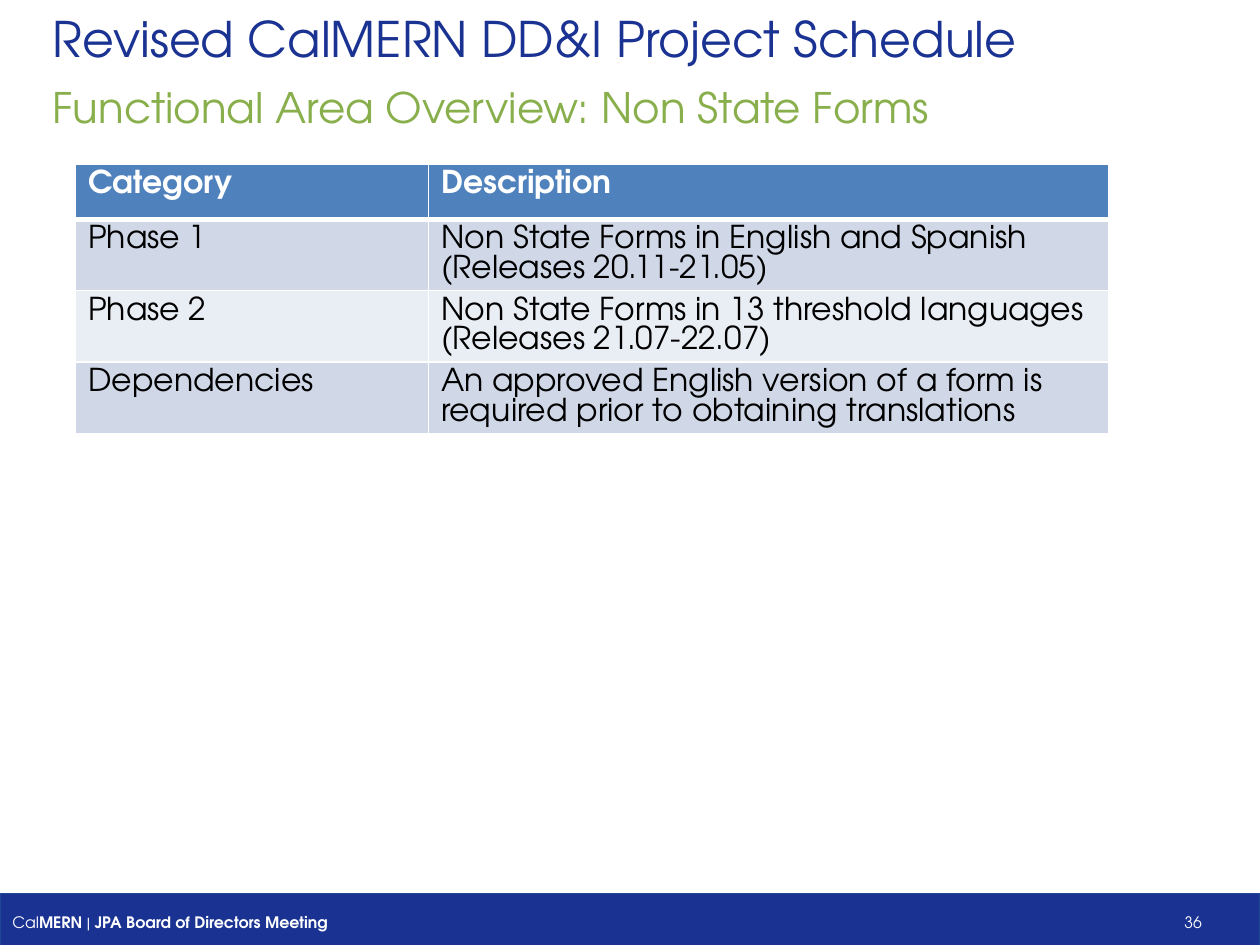
from lxml import etree
from pptx import Presentation
from pptx.dml.color import RGBColor
from pptx.enum.shapes import MSO_SHAPE
from pptx.enum.text import MSO_ANCHOR, MSO_AUTO_SIZE, PP_ALIGN
from pptx.oxml.ns import qn
from pptx.util import Inches, Pt

RECTANGLE = MSO_SHAPE.RECTANGLE
TOP, MIDDLE = MSO_ANCHOR.TOP, MSO_ANCHOR.MIDDLE
LEFT = PP_ALIGN.LEFT
NO_FIT = MSO_AUTO_SIZE.NONE

FONT = "TeX Gyre Adventor"
COLORS = {
    "navy": "1A3292",
    "footer line": "204792",
    "green": "88AF4B",
    "header": "4F81BD",
    "odd row": "D0D8E8",
    "even row": "E9EDF4",
    "white": "FFFFFF",
    "black": "000000",
}

TITLE = "Revised CalMERN DD&I Project Schedule"
SUBTITLE = "Functional Area Overview: Non State Forms"
TABLE = [
    ("Category", "Description"),
    ("Phase 1", "Non State Forms in English and Spanish (Releases 20.11-21.05)"),
    ("Phase 2", "Non State Forms in 13 threshold languages (Releases 21.07-22.07)"),
    ("Dependencies", "An approved English version of a form is required prior to obtaining translations"),
]
FOOTER = [  # text, bold
    ("Cal", False),
    ("MERN", True),
    (" | ", False),
    ("JPA Board of Directors Meeting\t\t", True),
    ("36", False),
]
FOOTER_TABS = [(4.69, "l"), (9.44, "r")]

SLIDE_W, SLIDE_H = 10, 7.5
HEADING_LEFT, HEADING_W = 0.32, 9.42
TABLE_LEFT, TABLE_TOP = 0.6, 1.3
COLUMN_WIDTHS = [2.8, 5.4]
ROW_H = 0.44
FOOTER_TOP, FOOTER_H = 7.09, 0.45


def rgb(name):
    return RGBColor.from_string(COLORS[name])


def add_run(paragraph, text, size, color, bold=False):
    run = paragraph.add_run()
    run.text = text
    run.font.name = FONT
    run.font.size = Pt(size)
    run.font.bold = bold
    run.font.color.rgb = rgb(color)


def fill_heading(placeholder, text, top, height, size, color, anchor):
    placeholder.left, placeholder.top = Inches(HEADING_LEFT), Inches(top)
    placeholder.width, placeholder.height = Inches(HEADING_W), Inches(height)
    frame = placeholder.text_frame
    frame.auto_size = NO_FIT
    frame.word_wrap = True
    frame.vertical_anchor = anchor
    paragraph = frame.paragraphs[0]
    paragraph.alignment = LEFT
    add_run(paragraph, text, size, color)
    return paragraph


def remove_bullet(paragraph):
    properties = paragraph._p.get_or_add_pPr()
    properties.set("marL", "0")
    properties.set("indent", "0")
    etree.SubElement(properties, qn("a:buNone"))


def set_borders(cell, widths):
    """Draw white cell borders; widths maps L, R, T, B to points."""
    properties = cell._tc.get_or_add_tcPr()
    for position, (side, width) in enumerate(widths.items()):
        line = etree.Element(qn(f"a:ln{side}"), w=str(Pt(width)))
        fill = etree.SubElement(line, qn("a:solidFill"))
        etree.SubElement(fill, qn("a:srgbClr"), val=COLORS["white"])
        properties.insert(position, line)


def add_schedule(slide):
    frame = slide.shapes.add_table(
        len(TABLE), len(COLUMN_WIDTHS), Inches(TABLE_LEFT), Inches(TABLE_TOP),
        Inches(sum(COLUMN_WIDTHS)), Inches(ROW_H * len(TABLE)))
    table = frame.table
    for column, width in zip(table.columns, COLUMN_WIDTHS):
        column.width = Inches(width)
    for r, row in enumerate(TABLE):
        is_header = r == 0
        table.rows[r].height = Inches(ROW_H)
        fill = "header" if is_header else "odd row" if r % 2 else "even row"
        borders = {"L": 1, "R": 1, "T": 3 if r == 1 else 1, "B": 3 if is_header else 1}
        for c, text in enumerate(row):
            cell = table.cell(r, c)
            cell.fill.solid()
            cell.fill.fore_color.rgb = rgb(fill)
            set_borders(cell, borders)
            add_run(cell.text_frame.paragraphs[0], text, 18,
                    "white" if is_header else "black", is_header)


def add_footer(slide):
    bar = slide.shapes.add_shape(
        RECTANGLE, 0, Inches(FOOTER_TOP), Inches(SLIDE_W), Inches(FOOTER_H))
    bar.shadow.inherit = False
    bar.fill.solid()
    bar.fill.fore_color.rgb = rgb("navy")
    bar.line.color.rgb = rgb("footer line")
    bar.line.width = Pt(0.75)
    bar.text_frame.vertical_anchor = MIDDLE
    bar.text_frame.word_wrap = True
    paragraph = bar.text_frame.paragraphs[0]
    paragraph.alignment = LEFT
    tabs = etree.SubElement(paragraph._p.get_or_add_pPr(), qn("a:tabLst"))
    for position, alignment in FOOTER_TABS:
        etree.SubElement(tabs, qn("a:tab"), pos=str(Inches(position)), algn=alignment)
    for text, bold in FOOTER:
        add_run(paragraph, text, 9, "white", bold)


def main():
    deck = Presentation()
    deck.slide_width, deck.slide_height = Inches(SLIDE_W), Inches(SLIDE_H)
    slide = deck.slides.add_slide(deck.slide_layouts[1])
    title, body = slide.placeholders
    add_footer(slide)
    fill_heading(title, TITLE, 0.01, 0.59, 28, "navy", MIDDLE)
    remove_bullet(fill_heading(body, SUBTITLE, 0.6, 0.56, 24, "green", TOP))
    add_schedule(slide)
    deck.save("out.pptx")


if __name__ == "__main__":
    main()
